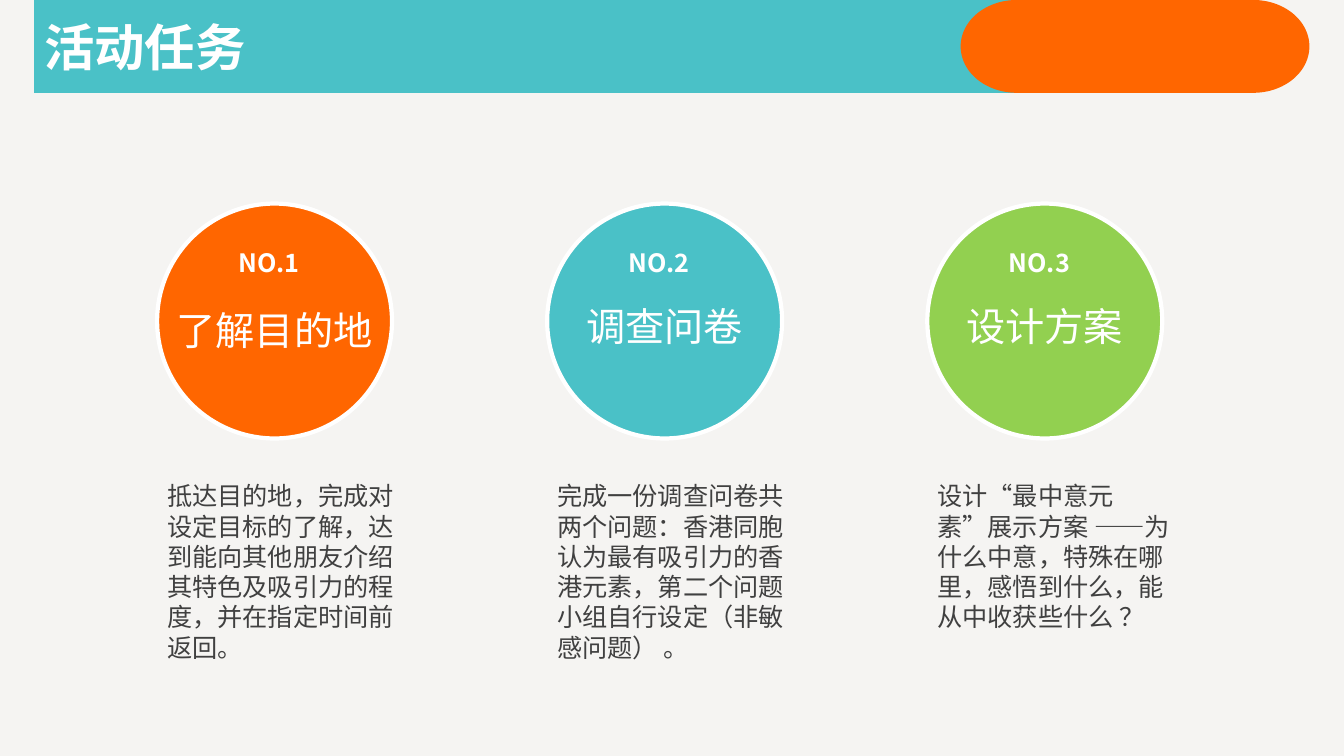
from collections import namedtuple

from lxml import etree
from pptx import Presentation
from pptx import util as u
from pptx.dml.color import RGBColor
from pptx.enum import lang, shapes, text
from pptx.oxml import ns

ORANGE = RGBColor(0xFF, 0x66, 0x00)
TEAL = RGBColor(0x4A, 0xC1, 0xC7)
GREEN = RGBColor(0x92, 0xD0, 0x50)
WHITE = RGBColor(0xFF, 0xFF, 0xFF)
GREY = RGBColor(0x40, 0x40, 0x40)
PAPER = RGBColor(0xF5, 0xF4, 0xF2)
CJK = "Noto Sans CJK SC"

Task = namedtuple("Task", "left color name name_font name_top brief")
TASKS = [
    Task(3.96, ORANGE, "了解目的地", "Calibri", 2.46,
         "抵达目的地，完成对设定目标的了解，达到能向其他朋友介绍其特色及吸引力的程度，并在指定时间前返回。"),
    Task(13.79, TEAL, "调查问卷", CJK, 2.36,
         "完成一份调查问卷共两个问题：香港同胞认为最有吸引力的香港元素，第二个问题小组自行设定（非敏感问题） 。"),
    Task(23.37, GREEN, "设计方案", CJK, 2.36,
         "设计“最中意元素”展示方案 ——为什么中意，特殊在哪里，感悟到什么，能从中收获些什么 ？"),
]
CIRCLE = 5.92


def box(left, top, width, height):
    return [u.Cm(value) for value in (left, top, width, height)]


def write(shape, wording, size, color, name=CJK, bold=False,
          align=text.PP_ALIGN.LEFT, anchor=text.MSO_ANCHOR.TOP, wrap=True):
    frame = shape.text_frame
    frame_format = {"word_wrap": wrap, "vertical_anchor": anchor,
                    "auto_size": text.MSO_AUTO_SIZE.NONE}
    for key, value in frame_format.items():
        setattr(frame, key, value)
    paragraph = frame.paragraphs[0]
    paragraph.alignment = align
    run = paragraph.add_run()
    run.text = wording
    font_format = {"size": u.Pt(size), "bold": bold, "name": name,
                   "language_id": lang.MSO_LANGUAGE_ID.SIMPLIFIED_CHINESE}
    for key, value in font_format.items():
        setattr(run.font, key, value)
    run.font.color.rgb = color
    latin = run.font._element.find(ns.qn("a:latin"))
    east_asian = etree.Element(ns.qn("a:ea"), typeface=CJK)
    latin.addnext(east_asian)


def add_filled(parent, preset, place, color):
    shape = parent.add_shape(preset, *place)
    shape.shadow.inherit = False
    shape.fill.solid()
    shape.fill.fore_color.rgb = color
    shape.line.fill.background()
    return shape


def add_header(slide, left, top, width, height):
    heading = slide.shapes.title
    bar = box(left, top, width, height)
    for key, value in zip(("left", "top", "width", "height"), bar):
        setattr(heading, key, value)
    heading.fill.solid()
    heading.fill.fore_color.rgb = TEAL
    write(heading, "活动任务", 36, WHITE, bold=True, anchor=text.MSO_ANCHOR.MIDDLE)
    add_filled(slide.shapes, shapes.MSO_SHAPE.FLOWCHART_TERMINATOR,
               box(left + width - 2.94, top, 8.79, height), ORANGE)


def add_task(slide, left, top, number, task):
    """Place a numbered circle with the task's brief below it."""
    badge = slide.shapes.add_group_shape().shapes
    circle = add_filled(badge, shapes.MSO_SHAPE.OVAL,
                        box(left, top, CIRCLE, CIRCLE), task.color)
    circle.line.color.rgb = WHITE
    circle.line.width = u.Pt(3)
    ordinal = add_filled(badge, shapes.MSO_SHAPE.RECTANGLE,
                         box(left + 1.8, top + 0.99, 2.34, 1.02), task.color)
    write(ordinal, f"NO.{number}", 18, WHITE, bold=True)
    name = badge.add_textbox(*box(left + 0.2, top + task.name_top, CIRCLE - 0.4, 1.45))
    write(name, task.name, 28, WHITE, name=task.name_font,
          align=text.PP_ALIGN.CENTER, wrap=False)
    brief = slide.shapes.add_textbox(*box(left, top + 6.86, 6.5, 4.88))
    write(brief, task.brief, 18, GREY)


def main():
    deck = Presentation()
    deck.slide_width, deck.slide_height = u.Cm(33.87), u.Cm(19.05)
    slide = deck.slides.add_slide(deck.slide_layouts.get_by_name("Title Only"))
    slide.background.fill.solid()
    slide.background.fill.fore_color.rgb = PAPER
    add_header(slide, 0.86, 0, 26.29, 2.34)
    for number, task in enumerate(TASKS, 1):
        add_task(slide, task.left, 5.13, number, task)
    deck.save("out.pptx")


if __name__ == "__main__":
    main()
